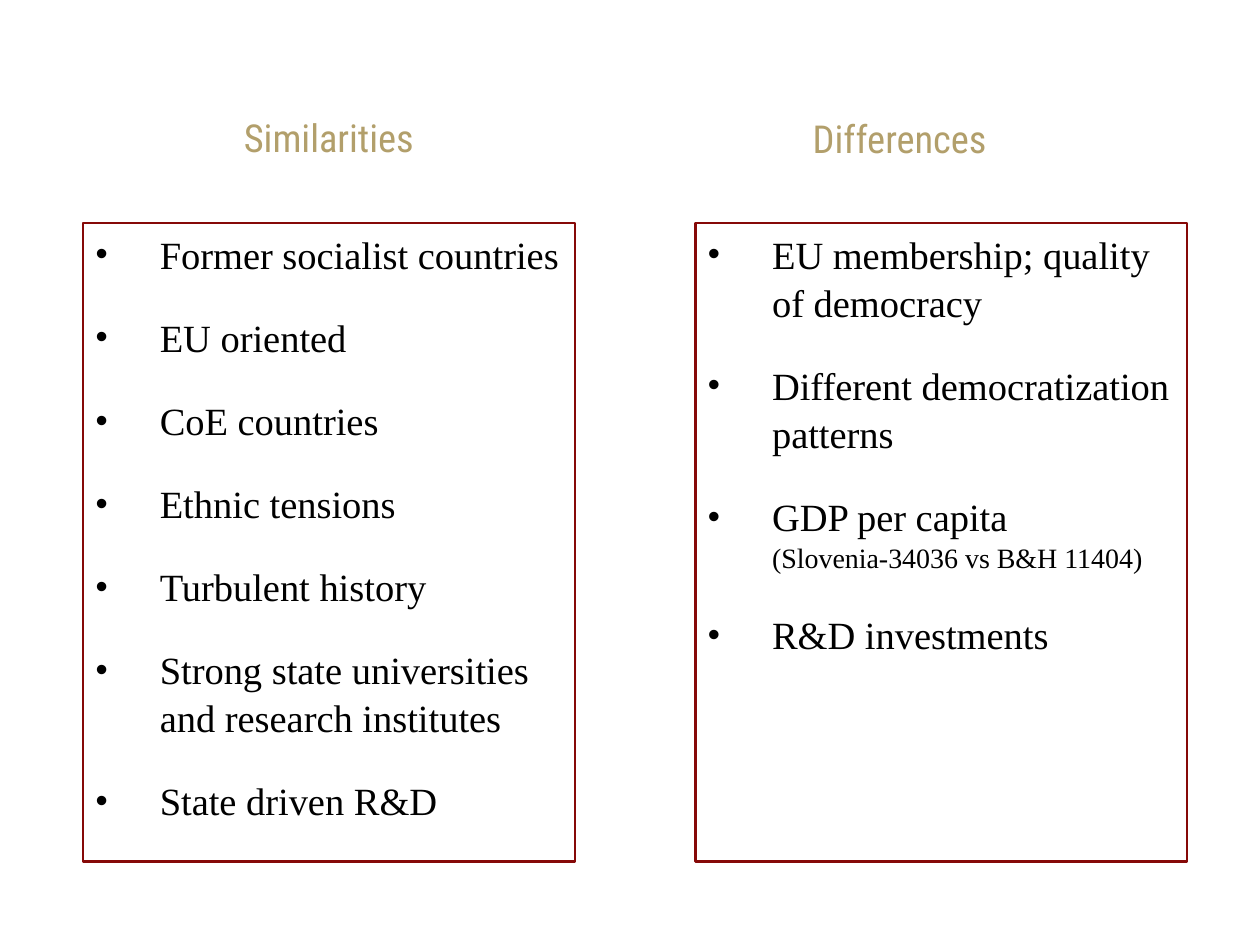
"""Build a two-column slide of similarities and differences."""
from lxml.etree import SubElement
from pptx import Presentation
from pptx.dml.color import RGBColor
from pptx.enum.shapes import MSO_SHAPE as Shape
from pptx.enum.text import MSO_ANCHOR as Anchor, PP_ALIGN as Align
from pptx.oxml.ns import qn
from pptx.util import Pt

GOLD = RGBColor(0xB2, 0x9F, 0x6B)
RED = RGBColor(0x86, 0x09, 0x08)
WHITE = RGBColor(255, 255, 255)
BLACK = RGBColor(0, 0, 0)

HEADING_FONT = "Roboto Condensed"
BODY_FONT = "Times New Roman"
TEXT_SIZE, NOTE_SIZE = 22, 16
HEADING_SIZE = (252, 46)
PANEL_SIZE = (281, 365)
PANEL_TOP = 127.4
INDENT = 36.7

COLUMNS = [
    {
        "heading": "Similarities", "heading_at": (61.9, 49), "panel_left": 47.5,
        "items": [
            ("Former socialist countries",),
            ("EU oriented",),
            ("CoE countries",),
            ("Ethnic tensions",),
            ("Turbulent history",),
            ("Strong state universities and research institutes",),
            ("State driven R&D",),
        ],
    },
    {
        "heading": "Differences", "heading_at": (388.1, 49.7), "panel_left": 397.4,
        "items": [
            ("EU membership; quality of democracy",),
            ("Different democratization patterns",),
            ("GDP per capita ", "(Slovenia-34036 vs B&H 11404)"),
            ("R&D investments",),
        ],
    },
]


def set_font(font, name, color):
    font.name, font.size = name, Pt(TEXT_SIZE)
    font.color.rgb = color


def add_heading(page, text, position):
    box = page.shapes.add_textbox(*map(Pt, position + HEADING_SIZE))
    frame = box.text_frame
    frame.word_wrap = True
    frame.vertical_anchor = Anchor.BOTTOM
    para = frame.paragraphs[0]
    para.text = text
    para.alignment = Align.CENTER
    set_font(para.font, HEADING_FONT, GOLD)


def add_bullet(para):
    properties = para._p.get_or_add_pPr()
    properties.set("marL", str(Pt(INDENT)))
    properties.set("indent", str(-Pt(INDENT)))
    SubElement(properties, qn("a:buSzPct"), val="90000")
    SubElement(properties, qn("a:buFont"), typeface="Arial")
    SubElement(properties, qn("a:buChar"), char="•")


def add_panel(page, left, items):
    panel = page.shapes.add_shape(
        Shape.RECTANGLE, *map(Pt, (left, PANEL_TOP) + PANEL_SIZE))
    panel.shadow.inherit = False
    panel.fill.solid()
    panel.fill.fore_color.rgb = WHITE
    panel.line.color.rgb = RED
    panel.line.width = Pt(1.5)
    frame = panel.text_frame
    frame.word_wrap = True
    frame.vertical_anchor = Anchor.TOP
    for index, (text, *notes) in enumerate(items):
        para = frame.add_paragraph() if index else frame.paragraphs[0]
        add_bullet(para)
        para.alignment = Align.LEFT
        para.line_spacing = 1.04
        para.space_before = Pt(20 if index else 0)
        set_font(para.font, BODY_FONT, BLACK)
        para.add_run().text = text
        for note in notes:
            span = para.add_run()
            span.text = note
            span.font.size = Pt(NOTE_SIZE)


def main():
    deck = Presentation()
    deck.slide_width, deck.slide_height = Pt(720), Pt(540)
    page = deck.slides.add_slide(deck.slide_layouts[6])
    for column in COLUMNS:
        add_heading(page, column["heading"], column["heading_at"])
        add_panel(page, column["panel_left"], column["items"])
    deck.save("out.pptx")


if __name__ == "__main__":
    main()
